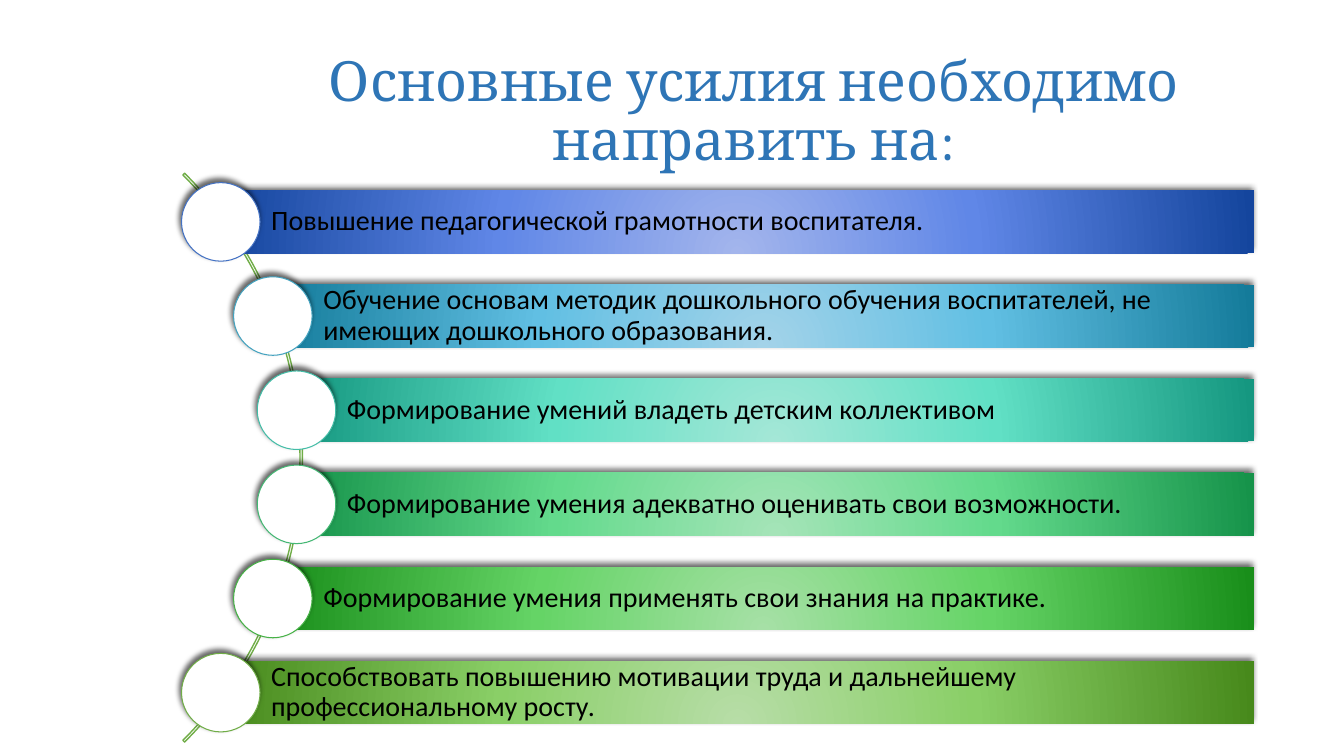
"""Builds a slide with a title and six goals strung along an arc."""
from dataclasses import dataclass

from lxml import etree
from pptx import Presentation
from pptx.dml.color import RGBColor
from pptx.enum import shapes, text
from pptx.oxml import parse_xml
from pptx.oxml.ns import nsdecls
from pptx.util import Pt

FIRST_TOP, STEP, BAR_HEIGHT, RIGHT = 136.1, 67.25, 44.8, 895.7
DIAMETER = 56.1
FRAME = {"vertical_anchor": text.MSO_ANCHOR.MIDDLE, "word_wrap": True,
         "auto_size": text.MSO_AUTO_SIZE.NONE}
BAR_INSETS = {"margin_left": Pt(36), "margin_top": Pt(4),
              "margin_right": Pt(4), "margin_bottom": Pt(4)}


@dataclass
class Goal:
    wording: str
    left: float
    light: str
    middle: str
    dark: str
    ring: str


GOALS = [
    Goal("Повышение педагогической грамотности воспитателя.",
         157.7, "A3B5EC", "6087E7", "14459D", "4472C4"),
    Goal("Обучение основам методик дошкольного обучения воспитателей, "
         "не имеющих дошкольного образования.",
         194.9, "A3D3E9", "61BFE3", "147B9A", "44A3C0"),
    Goal("Формирование умений владеть детским коллективом",
         211.8, "A4E7D7", "61E0C5", "159780", "43BDA7"),
    Goal("Формирование умения адекватно оценивать свои возможности.",
         211.8, "A5E4B8", "63DA8C", "16934A", "44B874"),
    Goal("Формирование умения применять свои знания на практике.",
         194.9, "A6E0A6", "65D466", "198E1A", "46B246"),
    Goal("Способствовать повышению мотивации труда и дальнейшему "
         "профессиональному росту.",
         157.7, "B7DDA7", "8ACF67", "47891B", "70AD47"),
]


def colour(value: str) -> RGBColor:
    return RGBColor.from_string(value)


def apply(target, values: dict) -> None:
    for name, value in values.items():
        setattr(target, name, value)


def write(shape, wording: str, size: float, font: str, ink: str,
          frame: dict, paragraph_format: dict) -> None:
    shape.text_frame.text = wording
    apply(shape.text_frame, frame)
    paragraph = shape.text_frame.paragraphs[0]
    apply(paragraph, paragraph_format)
    run = paragraph.runs[0]
    apply(run.font, {"size": Pt(size), "name": font})
    run.font.color.rgb = colour(ink)


def add_shape(slide, preset, left: float, top: float, width: float, height: float):
    shape = slide.shapes.add_shape(preset, Pt(left), Pt(top), Pt(width), Pt(height))
    shape.shadow.inherit = False
    return shape


def outline(shape, value: str, width: float) -> None:
    shape.line.color.rgb = colour(value)
    shape.line.width = Pt(width)


def cast_shadow(shape) -> None:
    effects = shape._element.spPr.find("{*}effectLst")
    effects.append(parse_xml(
        f'<a:outerShdw {nsdecls("a")} blurRad="{Pt(4)}" dist="{Pt(3)}" '
        f'dir="{245 * 60000}" rotWithShape="0"><a:srgbClr val="000000">'
        '<a:alpha val="60000"/></a:srgbClr></a:outerShdw>'))


def radial_fill(shape, goal: Goal) -> None:
    shape.fill.solid()
    properties = shape._element.spPr
    gradient = parse_xml(f'<a:gradFill {nsdecls("a")} rotWithShape="1"><a:gsLst/>'
                         '<a:path path="circle"><a:fillToRect l="50000" t="155000" '
                         'r="50000" b="-55000"/></a:path></a:gradFill>')
    stops = gradient[0]
    namespace = etree.QName(stops).namespace
    for position, value in ((0, goal.light), (46, goal.middle), (100, goal.dark)):
        stop = etree.SubElement(stops, f"{{{namespace}}}gs", pos=str(position * 1000))
        etree.SubElement(stop, f"{{{namespace}}}srgbClr", val=value)
    properties.replace(properties.find("{*}solidFill"), gradient)


def add_goal(slide, goal: Goal, top: float) -> None:
    bar = add_shape(slide, shapes.MSO_SHAPE.RECTANGLE,
                    goal.left, top, RIGHT - goal.left, BAR_HEIGHT)
    radial_fill(bar, goal)
    bar.line.fill.background()
    cast_shadow(bar)
    write(bar, goal.wording, 20, "Calibri", "000000", FRAME | BAR_INSETS,
          {"alignment": text.PP_ALIGN.LEFT, "line_spacing": 0.9})

    bead = add_shape(slide, shapes.MSO_SHAPE.OVAL, goal.left - DIAMETER / 2,
                     top + (BAR_HEIGHT - DIAMETER) / 2, DIAMETER, DIAMETER)
    bead.fill.solid()
    bead.fill.fore_color.rgb = colour("FFFFFF")
    outline(bead, goal.ring, 0.75)
    cast_shadow(bead)


def add_arc(slide) -> None:
    arc = add_shape(slide, shapes.MSO_SHAPE.BLOCK_ARC, -358.6, 39.6, 574.6, 574.6)
    for index, value in enumerate((189, 27, 0.003)):
        arc.adjustments[index] = value
    arc.fill.background()
    outline(arc, "70AD47", 1)


def main() -> None:
    deck = Presentation()
    apply(deck, {"slide_width": Pt(960), "slide_height": Pt(540)})
    slide = deck.slides.add_slide(deck.slide_layouts[5])
    title = slide.shapes.title
    apply(title, {"left": Pt(182.9), "top": Pt(28.8),
                  "width": Pt(711.4), "height": Pt(104.4)})
    write(title, "Основные усилия необходимо направить на:", 39.6, "Cambria",
          "2E75B6", FRAME, {"alignment": text.PP_ALIGN.CENTER, "line_spacing": 0.88})
    add_arc(slide)
    for row, goal in enumerate(GOALS):
        add_goal(slide, goal, FIRST_TOP + row * STEP)
    deck.save("out.pptx")


if __name__ == "__main__":
    main()
